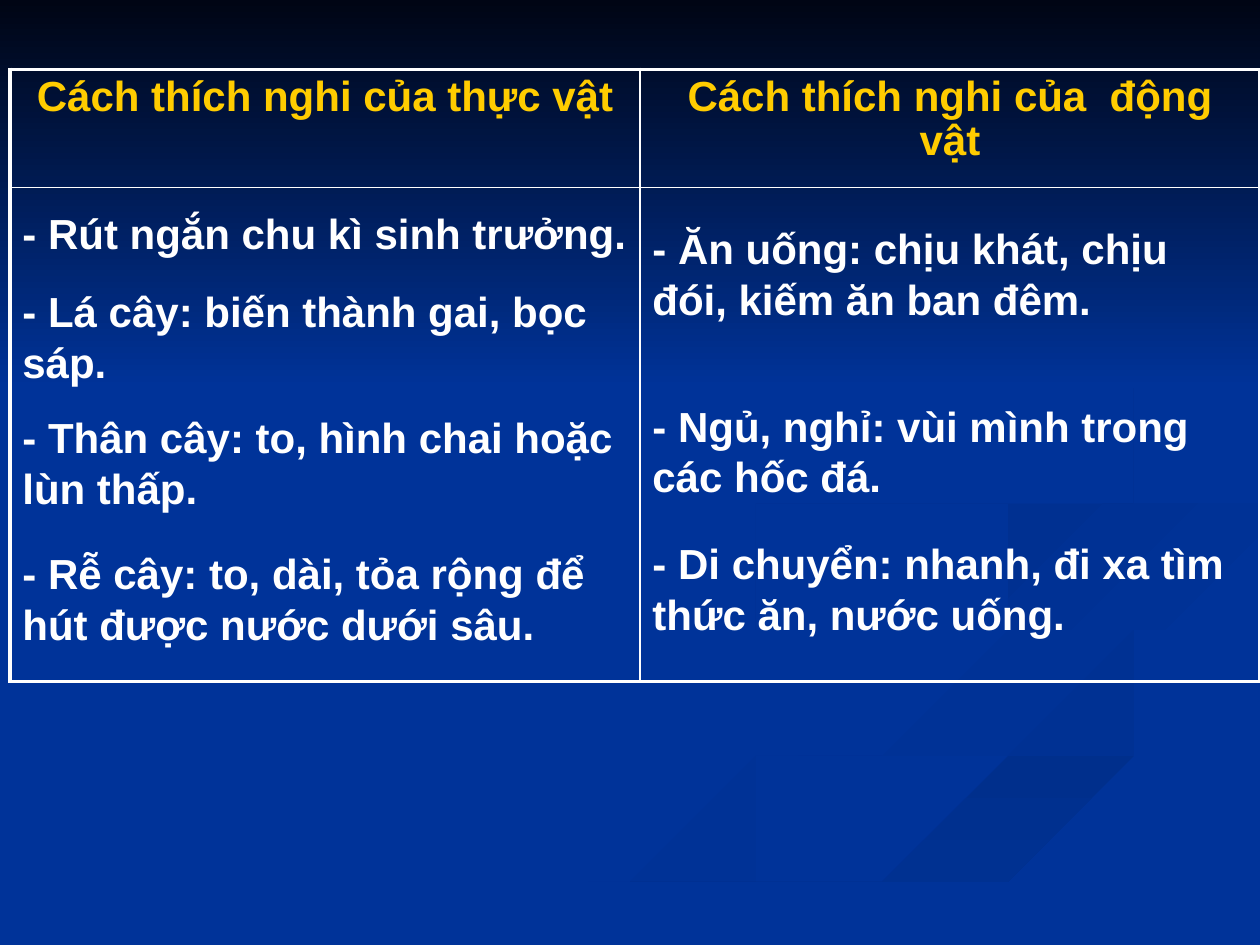
from lxml import etree
from pptx import Presentation
from pptx.dml.color import RGBColor
from pptx.enum import shapes, text
from pptx.oxml import ns
from pptx.util import Inches, Pt

BLUE = RGBColor(0x00, 0x33, 0x99)
NIGHT = RGBColor(0x00, 0x05, 0x14)
DEEP = RGBColor(0x00, 0x31, 0x93)
DEEPER = RGBColor(0x00, 0x2F, 0x8C)
SHADE = RGBColor(0x00, 0x30, 0x91)
DUSK = RGBColor(0x00, 0x2F, 0x8E)
GOLD = RGBColor(0xFF, 0xCC, 0x00)
WHITE = RGBColor(0xFF, 0xFF, 0xFF)


def paint(shape, first, last, angle):
    shape.shadow.inherit = False
    shape.line.fill.background()
    if first == last:
        shape.fill.solid()
        shape.fill.fore_color.rgb = first
        return
    shape.fill.gradient()
    shape.fill.gradient_angle = (360 - angle) % 360
    for stop, color in zip(shape.fill.gradient_stops, (first, last)):
        stop.color.rgb = color


def write(paragraph, words, color, spacing):
    paragraph.line_spacing = spacing
    run = paragraph.add_run()
    run.text = words
    run.font.name = "Arial"
    run.font.size = Pt(24)
    run.font.bold = True
    run.font.color.rgb = color


presentation = Presentation()
presentation.slide_width = Inches(10)
presentation.slide_height = Inches(7.5)
slide = presentation.slides.add_slide(presentation.slide_layouts[6])
slide.background.fill.solid()
slide.background.fill.fore_color.rgb = BLUE

swooshes = [
    (BLUE, DEEP, 0, [
        [(5.75, 4.59), (5.81, 4.84), (6.79, 5.19), (7.76, 5.53), (7.74, 5.83),
         (6.52, 6.2), (4.58, 6.74), (3, 7.49)],
        [(3.61, 7.49), (4.99, 6.87), (6.51, 6.4), (7.8, 6.05), (7.92, 5.61),
         (6.82, 5.19), (5.94, 4.85), (5.75, 4.59)]]),
    (BLUE, DEEP, 45, [
        [(7.24, 4.64), (7.46, 5), (8.38, 5.36), (9.07, 5.62), (9.14, 5.89), (8.94, 6.05)],
        [(8.94, 6.05), (9.41, 5.81), (9.3, 5.53), (8.3, 5.19), (7.45, 4.9), (7.24, 4.64)]]),
    (DEEPER, BLUE, 90, [
        [(5.03, 7.49), (5.19, 7.47), (6.3, 6.93), (7.64, 6.47), (9.03, 6.1), (9.98, 5.81)],
        [(9.98, 6.09), (8.21, 6.51), (6.7, 7.02), (5.71, 7.49)]]),
    (BLUE, BLUE, 0, [
        [(9.99, 3.87), (8.74, 4.08), (7.55, 4.32), (7.25, 4.64), (7.59, 4.98),
         (8.71, 5.3), (9.43, 5.7), (8.92, 6.05), (6.63, 6.68), (4.77, 7.49)],
        [(5.19, 7.47), (6.3, 6.93), (7.65, 6.47), (9.04, 6.1), (9.99, 5.81)],
        [(9.99, 5.38), (8.66, 5.09), (7.81, 4.63), (8.5, 4.27), (9.99, 4.02)]]),
    (SHADE, BLUE, 45, [
        [(9.98, 4.02), (8.65, 4.24), (7.81, 4.6), (8.26, 4.96)],
        [(8.26, 4.96), (8.05, 4.72), (8.59, 4.43), (9.98, 4.2)]]),
    (DUSK, BLUE, 45, [
        [(7.62, 2.33), (8.43, 2.75), (8.94, 3.44), (8.41, 3.96), (6.83, 4.3),
         (5.96, 4.61), (6.22, 5)],
        [(6.22, 5), (5.78, 4.56), (6.49, 4.2), (8.18, 3.86), (8.89, 3.35),
         (8.46, 2.79), (7.62, 2.33)]]),
]
for first, last, angle, edges in swooshes:
    outline = []
    for edge in edges:
        padded = [edge[0], *edge, edge[-1]]
        for before, start, end, after in zip(padded, edge, edge[1:], padded[3:]):
            for step in range(5):
                t = step / 5
                outline.append(tuple(
                    b + t / 2 * (c - a + t * (2 * a - 5 * b + 4 * c - d
                                             + t * (3 * (b - c) + d - a)))
                    for a, b, c, d in zip(before, start, end, after)))
        outline.append(edge[-1])
    builder = slide.shapes.build_freeform(*outline[0], scale=Inches(1))
    builder.add_line_segments(outline[1:], close=True)
    paint(builder.convert_to_shape(), first, last, angle)

sky = slide.shapes.add_shape(
    shapes.MSO_SHAPE.RECTANGLE, 0, 0, Inches(10), Inches(3.08))
paint(sky, NIGHT, BLUE, 90)

table = slide.shapes.add_table(
    2, 2, Inches(0.08), Inches(0.55), Inches(9.92), Inches(4.86)).table
table.first_row = False
table.horz_banding = False
for column, width in zip(table.columns, (5, 4.92)):
    column.width = Inches(width)
for row, height in zip(table.rows, (0.94, 3.92)):
    row.height = Inches(height)

headings = ("Cách thích nghi của thực vật", "Cách thích nghi của  động vật")
for row in range(2):
    for column in range(2):
        cell = table.cell(row, column)
        if row == 0:
            paragraph = cell.text_frame.paragraphs[0]
            paragraph.alignment = text.PP_ALIGN.CENTER
            write(paragraph, headings[column], GOLD, 0.95)
        properties = cell._tc.get_or_add_tcPr()
        outer = {"a:lnL": column == 0, "a:lnR": column == 1,
                 "a:lnT": row == 0, "a:lnB": row == 1}
        for tag, is_outer in outer.items():
            border = etree.SubElement(
                properties, ns.qn(tag), w=str(int(Pt(2.25 if is_outer else 1))))
            solid = etree.SubElement(border, ns.qn("a:solidFill"))
            etree.SubElement(solid, ns.qn("a:srgbClr"), val=str(WHITE))
        cell.fill.background()

adaptations = [
    (0.08, 1.6, 5.13, 0.5, "- Rút ngắn chu kì sinh trưởng."),
    (0.08, 2.22, 5, 0.9, "- Lá cây: biến thành gai, bọc sáp."),
    (0.08, 3.22, 5, 0.9, "- Thân cây: to, hình chai hoặc lùn thấp."),
    (0.08, 4.3, 5, 0.9, "- Rễ cây: to, dài, tỏa rộng để hút được nước dưới sâu."),
    (5.08, 1.72, 4.5, 0.9, "- Ăn uống: chịu khát, chịu đói, kiếm ăn ban đêm."),
    (5.08, 3.13, 4.5, 0.9, "- Ngủ, nghỉ: vùi mình trong các hốc đá."),
    (5.08, 4.22, 4.92, 0.9, "- Di chuyển: nhanh, đi xa tìm thức ăn, nước uống."),
]
for left, top, width, height, words in adaptations:
    box = slide.shapes.add_textbox(*map(Inches, (left, top, width, height)))
    box.text_frame.word_wrap = True
    box.text_frame.auto_size = text.MSO_AUTO_SIZE.SHAPE_TO_FIT_TEXT
    write(box.text_frame.paragraphs[0], words, WHITE, Pt(28.8))

presentation.save("out.pptx")
